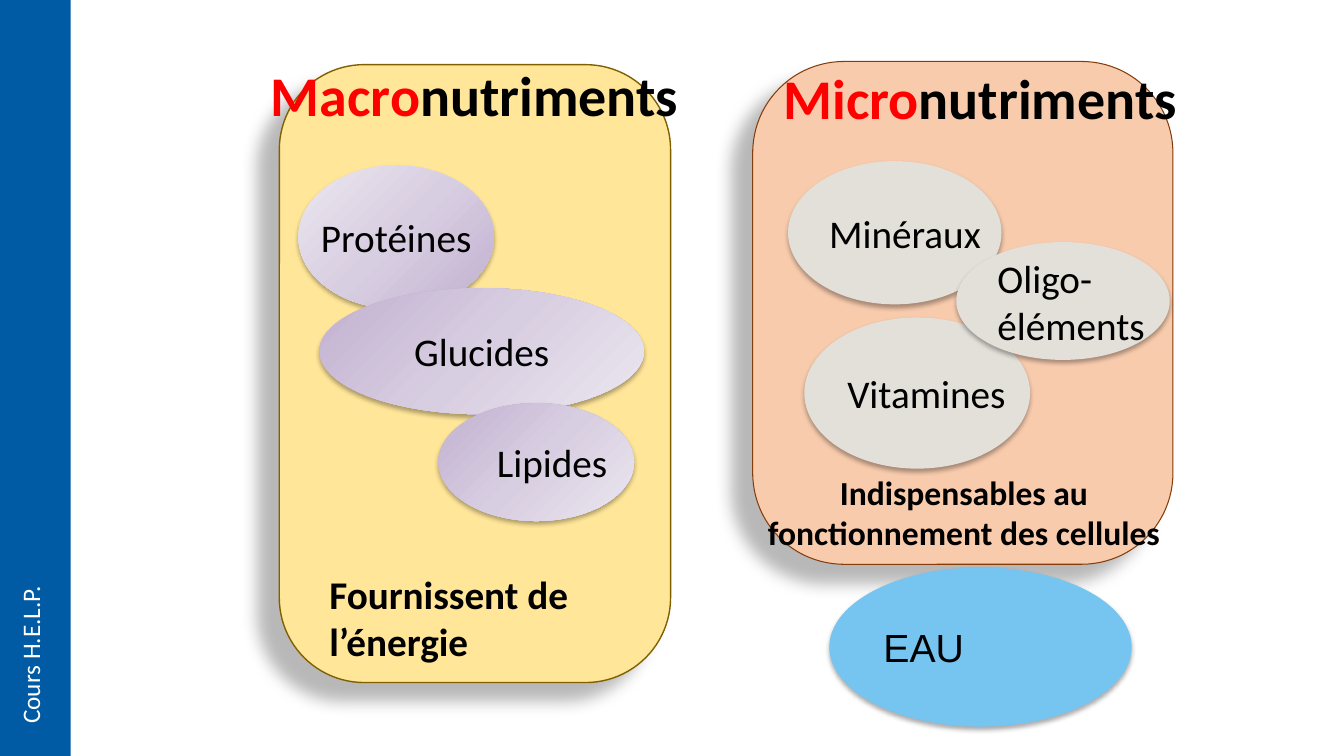
from lxml import etree
from pptx import Presentation
from pptx import util as u
from pptx.dml.color import RGBColor
from pptx.enum import shapes, text
from pptx.oxml.ns import nsdecls

COLORS = {
    "black": "000000", "white": "FFFFFF", "red": "FF0000", "bar": "005BA4",
    "peach": "F8CBAD", "brown": "843C0B", "yellow": "FFE699", "olive": "806000",
    "grey": "E2E0D9", "water": "76C4F0",
    "mauve_dark": "C1B0D0", "mauve": "D8CEE1", "mauve_light": "EBE7F0",
}
LEFT, CENTER = text.PP_ALIGN.LEFT, text.PP_ALIGN.CENTER
LINEAR = '<a:lin ang="2700000" scaled="0"/>'
RADIAL = '<a:path path="circle"><a:fillToRect l="100000" t="100000"/></a:path>'


def add_shape(kind, box, fill, shadow=None):
    sp = slide.shapes.add_shape(kind, *map(u.Cm, box))
    sp.line.fill.background()
    sp.shadow.inherit = False
    spPr = sp._element.spPr
    if fill in COLORS:
        sp.fill.solid()
        sp.fill.fore_color.rgb = RGBColor.from_string(COLORS[fill])
    else:
        stops = "".join(
            f'<a:gs pos="{i * 50000}"><a:srgbClr val="{COLORS[name]}"/></a:gs>'
            for i, name in enumerate(["mauve_dark", "mauve", "mauve_light"]))
        spPr.insert(2, etree.fromstring(
            f'<a:gradFill {nsdecls("a")} rotWithShape="1"><a:gsLst>{stops}</a:gsLst>{fill}</a:gradFill>'))
    if shadow:
        alpha, blur, dist, angle = shadow
        spPr.find("{*}effectLst").append(etree.fromstring(
            f'<a:outerShdw {nsdecls("a")} blurRad="{u.Pt(blur)}" dist="{u.Pt(dist)}" '
            f'dir="{angle * 60000}" algn="ctr" rotWithShape="0">'
            f'<a:srgbClr val="{COLORS["black"]}"><a:alpha val="{alpha * 1000}"/></a:srgbClr></a:outerShdw>'))
    return sp


def write(tf, lines, size, align=LEFT, bold=False, font="Calibri", wrap=False):
    tf.word_wrap = wrap
    for i, runs in enumerate(lines):
        p = tf.add_paragraph() if i else tf.paragraphs[0]
        p.alignment = align
        for words, color in runs:
            r = p.add_run()
            r.text = words
            r.font.name = font
            r.font.size = u.Pt(size)
            r.font.bold = bold
            r.font.color.rgb = RGBColor.from_string(COLORS[color])


prs = Presentation()
prs.slide_width, prs.slide_height = u.Cm(33.87), u.Cm(19.05)
slide = prs.slides.add_slide(prs.slide_layouts[6])

cards = [
    ((18.97, 1.55, 10.59, 12.67), "peach", "brown", 0.75),
    ((7.04, 1.63, 9.86, 15.57), "yellow", "olive", 1),
]
for box, fill, line, width in cards:
    sp = add_shape(shapes.MSO_SHAPE.ROUNDED_RECTANGLE, box, fill, (28, 11.8, 19.7, 141))
    sp.adjustments[0] = 0.217
    sp.line.color.rgb = RGBColor.from_string(COLORS[line])
    sp.line.width = u.Pt(width)

nutrients = [
    (["Vitamines"], (20.27, 8, 5.69, 3.81), "grey", LEFT, "Calibri", 0.25),
    (["Protéines"], (7.52, 4.17, 4.93, 3.61), RADIAL, CENTER, "Calibri", 0.25),
    (["Glucides"], (8.05, 7.26, 8.18, 3.18), LINEAR, CENTER, "Calibri", 0.25),
    (["Lipides"], (11.05, 10.16, 4.93, 2.97), LINEAR, CENTER, "Calibri", 1.05),
    (["Minéraux"], (19.86, 4.06, 5.38, 3.61), "grey", LEFT, "Calibri", 0.25),
    (["EAU"], (20.9, 14.3, 7.62, 4.01), "water", LEFT, "Arial", 0.25),
    (["Oligo-", "éléments"], (24.1, 6.1, 5.38, 2.97), "grey", LEFT, "Calibri", 0.25),
]
for names, box, fill, align, font, inset in nutrients:
    sp = add_shape(shapes.MSO_SHAPE.OVAL, box, fill, (32, 3.5, 2.2, 90))
    tf = sp.text_frame
    tf.vertical_anchor = text.MSO_ANCHOR.MIDDLE
    tf.margin_left = u.Cm(inset)
    write(tf, [[(name, "black")] for name in names], 28, align, font=font)

add_shape(shapes.MSO_SHAPE.RECTANGLE, (0, 0, 1.78, 19.05), "bar")

captions = [
    ((8.05, 14.25, 7.32, 2.64), [[("Fournissent de l’énergie", "black")]], 28, LEFT, True, True),
    ((19.13, 1.47, 11.15, 1.96), [[("Micro", "red"), ("nutriments", "black")]], 40, CENTER, True, True),
    ((6.17, 1.4, 11.58, 1.96), [[("Macro", "red"), ("nutriments", "black")]], 40, CENTER, True, True),
    ((19.05, 11.76, 10.49, 2.31),
     [[("Indispensables au", "black")], [("fonctionnement des cellules", "black")]], 24, CENTER, True, False),
    ((0.25, 14.4, 1.27, 4.09), [[("Cours H.E.L.P.", "white")]], 18, LEFT, False, False),
]
for box, lines, size, align, bold, wrap in captions:
    sp = slide.shapes.add_textbox(*map(u.Cm, box))
    write(sp.text_frame, lines, size, align, bold, wrap=wrap)
    sp.text_frame.auto_size = text.MSO_AUTO_SIZE.SHAPE_TO_FIT_TEXT

course_label = sp
course_label.text_frame._txBody.bodyPr.set("vert", "vert270")

prs.save("out.pptx")
